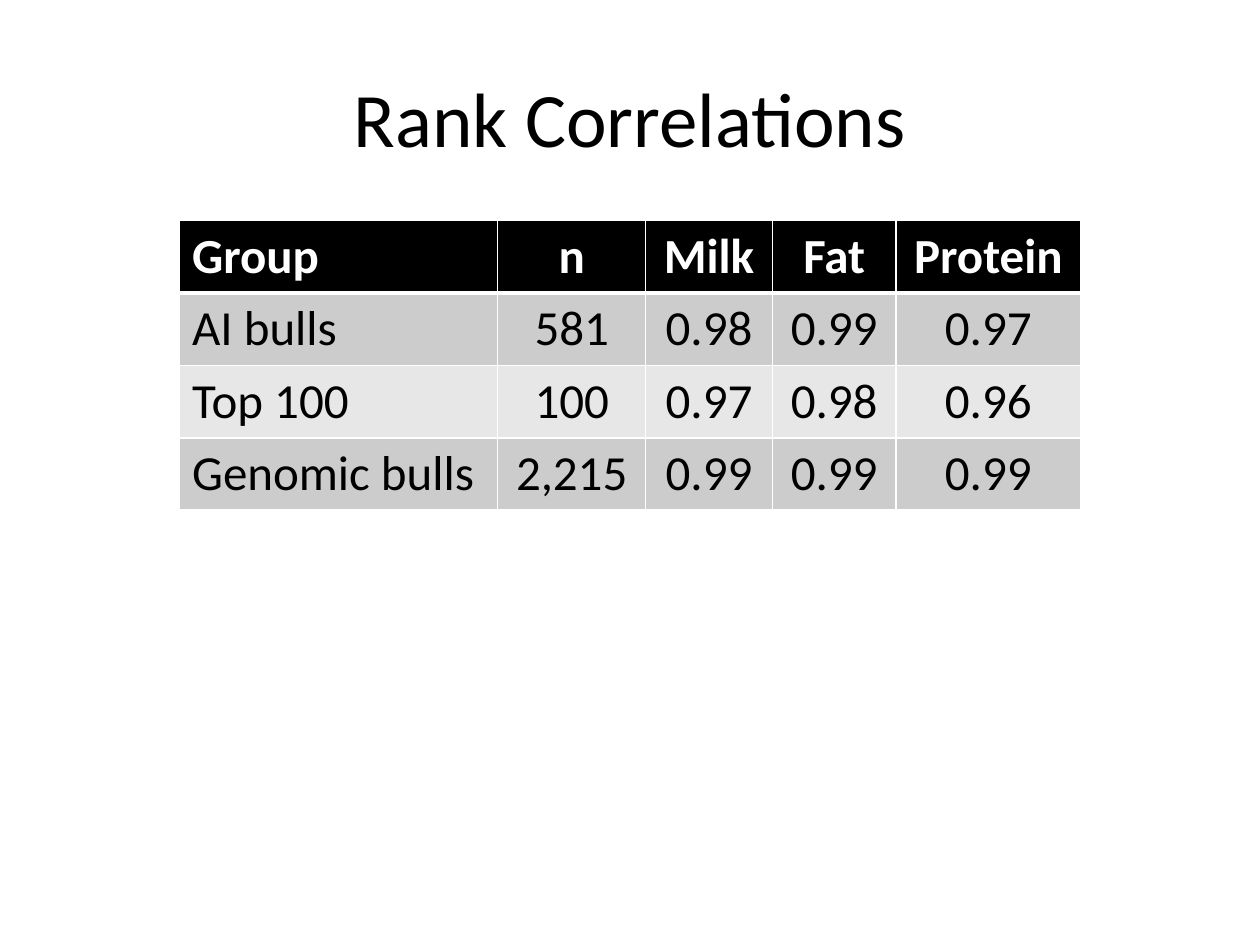
from lxml import etree
from pptx import Presentation
from pptx.dml.color import RGBColor
from pptx.enum.text import MSO_ANCHOR, PP_ALIGN
from pptx.oxml.ns import qn
from pptx.util import Pt

LEFT, CENTER = PP_ALIGN.LEFT, PP_ALIGN.CENTER
MIDDLE = MSO_ANCHOR.MIDDLE
BLACK, WHITE = "000000", "FFFFFF"
BANDS = ["CCCCCC", "E7E7E7"]


def write(paragraph, text, color, align, **font_format):
    paragraph.alignment = align
    run = paragraph.add_run()
    run.text = text
    run.font.color.rgb = RGBColor.from_string(color)
    for attribute, value in {"name": "Calibri", **font_format}.items():
        setattr(run.font, attribute, value)


def add_borders(cell, widths):
    """Draw white cell borders; widths maps side tags to points, in schema order."""
    properties = cell._tc.get_or_add_tcPr()
    for position, (side, width) in enumerate(widths.items()):
        line = etree.Element(qn(f"a:{side}"), w=str(Pt(width)))
        fill = etree.SubElement(line, qn("a:solidFill"))
        etree.SubElement(fill, qn("a:srgbClr"), val=WHITE)
        properties.insert(position, line)


prs = Presentation()
prs.slide_width, prs.slide_height = Pt(720), Pt(540)
slide = prs.slides.add_slide(prs.slide_layouts[6])

title = slide.shapes.add_textbox(Pt(36), Pt(21.6), Pt(648), Pt(90)).text_frame
title.word_wrap = True
title.vertical_anchor = MIDDLE
write(title.paragraphs[0], "Rank Correlations", BLACK, CENTER, size=Pt(44))

correlations = [
    ["Group", "n", "Milk", "Fat", "Protein"],
    ["AI bulls", "581", "0.98", "0.99", "0.97"],
    ["Top 100", "100", "0.97", "0.98", "0.96"],
    ["Genomic bulls", "2,215", "0.99", "0.99", "0.99"],
]
column_widths = [181.8, 84.6, 72.4, 70.6, 105.6]
row_height = 41.4

table = slide.shapes.add_table(
    len(correlations), len(column_widths), Pt(102.6), Pt(126),
    Pt(sum(column_widths)), Pt(row_height * len(correlations))).table
for column, width in zip(table.columns, column_widths):
    column.width = Pt(width)

for r, values in enumerate(correlations):
    table.rows[r].height = Pt(row_height)
    is_header = r == 0
    fill_color = BLACK if is_header else BANDS[(r - 1) % 2]
    borders = {"lnL": 1, "lnR": 1, "lnT": 3 if r == 1 else 1, "lnB": 3 if is_header else 1}
    for c, value in enumerate(values):
        cell = table.cell(r, c)
        cell.fill.solid()
        cell.fill.fore_color.rgb = RGBColor.from_string(fill_color)
        add_borders(cell, borders)
        write(cell.text_frame.paragraphs[0], value, WHITE if is_header else BLACK,
              LEFT if c == 0 else CENTER, size=Pt(28), bold=is_header)

prs.save("out.pptx")
